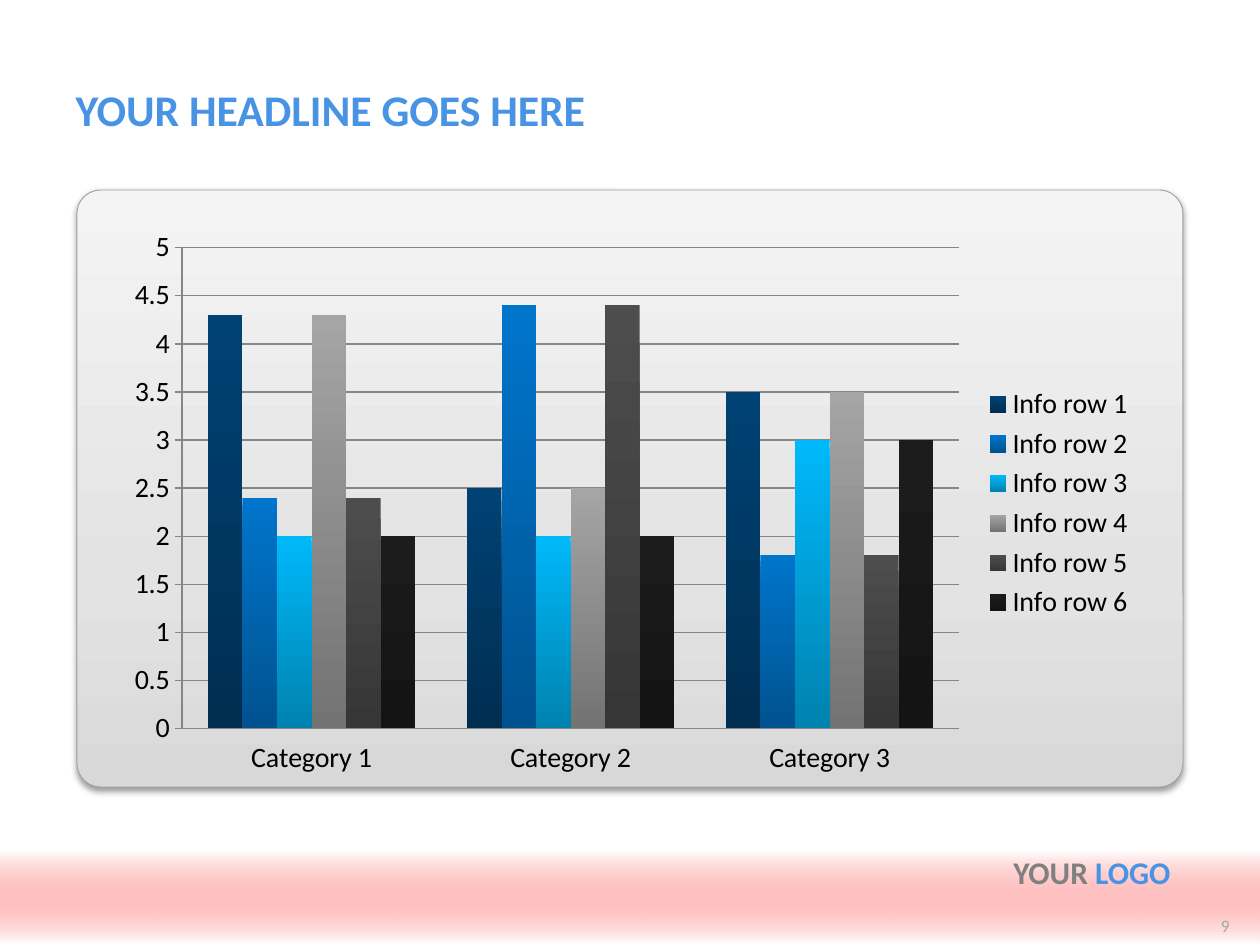
from copy import deepcopy
from dataclasses import dataclass

from lxml.etree import SubElement
from pptx import Presentation
from pptx.chart.data import CategoryChartData
from pptx.dml.color import RGBColor
from pptx.enum.chart import XL_CHART_TYPE, XL_LEGEND_POSITION, XL_TICK_MARK
from pptx.enum.shapes import MSO_SHAPE
from pptx.enum.text import MSO_ANCHOR, PP_ALIGN
from pptx.oxml import parse_xml
from pptx.oxml.ns import nsdecls, qn
from pptx.util import Emu, Pt


@dataclass(frozen=True)
class Theme:
    font: str = "Calibri"
    blue: str = "4993E5"
    gray: str = "808080"
    pale: str = "A6A6A6"
    black: str = "000000"
    edge: str = "A1A1A1"
    grid: str = "868686"
    panel: tuple = ((0, "D8D8D8"), (35, "E3E3E3"), (100, "F4F4F4"))
    band: tuple = ((0, "FF0000", 0), (100, "FFFFFF"))
    bars: tuple = ("004274", "0075CC", "00B9FA", "A5A5A5", "4D4D4D", "1C1C1C")
    head: int = 25
    logo: int = 18
    label: int = 16
    page: int = 10


T = Theme()
SCALE = 914400 / 126
UP, DOWN = 90, 270

CATS = ("Category 1", "Category 2", "Category 3")
ROWS = ((4.3, 2.5, 3.5), (2.4, 4.4, 1.8), (2, 2, 3)) * 2


def px(n):
    return Emu(round(n * SCALE))


def place(box):
    return [px(n) for n in box]


def rgb(code):
    return RGBColor.from_string(code)


def shade(code, part=0.7):
    return "".join(f"{round(c * part):02X}" for c in rgb(code))


def style(font, size, color, bold=None):
    font.name, font.size, font.bold = T.font, Pt(size), bold
    font.color.rgb = rgb(color)


def blend(fill, root, stops, angle):
    """Fill with (percent, colour[, alpha]) stops running along the angle."""
    fill.gradient()
    fill.gradient_angle = angle
    group = root.find(".//" + qn("a:gsLst"))
    for _ in stops[2:]:
        group.append(deepcopy(group[0]))
    for stop, (at, color, *alpha) in zip(fill.gradient_stops, stops):
        stop.position = at / 100
        stop.color.rgb = rgb(color)
        for part in alpha:
            node = group[stops.index((at, color, *alpha))][0]
            SubElement(node, qn("a:alpha"), val=str(part * 1000))


def block(slide, kind, box, stops, angle):
    shape = slide.shapes.add_shape(kind, *place(box))
    shape.shadow.inherit = False
    shape.line.fill.background()
    blend(shape.fill, shape._element, stops, angle)
    return shape


def panel(slide, box):
    shape = block(slide, MSO_SHAPE.ROUNDED_RECTANGLE, box, T.panel, UP)
    shape.adjustments[0] = 0.04
    shape.line.color.rgb = rgb(T.edge)
    shape.line.width = Pt(0.5)
    shape._element.spPr.find(qn("a:effectLst")).append(parse_xml(
        f'<a:outerShdw {nsdecls("a")} blurRad="{Pt(3.5)}" dist="{Pt(2)}" '
        'dir="5400000" rotWithShape="0"><a:srgbClr val="000000">'
        '<a:alpha val="38000"/></a:srgbClr></a:outerShdw>'))


def title(slide, box):
    head = slide.shapes.title
    head.left, head.top, head.width, head.height = place(box)
    frame = head.text_frame
    frame.text = "YOUR HEADLINE GOES HERE"
    frame.vertical_anchor = MSO_ANCHOR.MIDDLE
    line = frame.paragraphs[0]
    line.alignment = PP_ALIGN.LEFT
    style(line.font, T.head, T.blue, True)


def note(slide, box, anchor):
    """Add a right-aligned text box and return its paragraph."""
    frame = slide.shapes.add_textbox(*place(box)).text_frame
    frame.word_wrap = True
    frame.vertical_anchor = anchor
    line = frame.paragraphs[0]
    line.alignment = PP_ALIGN.RIGHT
    return line


def footer(slide, box):
    x, y, w, h = box
    block(slide, MSO_SHAPE.RECTANGLE, box, T.band, DOWN)
    logo = note(slide, (x + 63, y - 4, 1120, 69), MSO_ANCHOR.TOP)
    for text, color in (("YOUR", T.gray), (" LOGO", T.blue)):
        run = logo.add_run()
        run.text = text
        style(run.font, T.logo, color, True)
    page = note(slide, (x + w - 77, y + h - 38, 59, 38), MSO_ANCHOR.MIDDLE)
    page.text = "9"
    style(page.font, T.page, T.pale)


def fix_plot(chart, box, plot):
    """Pin the inner plot area, given in px relative to the chart box."""
    size = box[2:] * 2
    parts = "".join(
        f'<c:{tag} val="{n / full:.3f}"/>'
        for tag, n, full in zip("xywh", plot, size))
    area = chart._chartSpace.find(".//" + qn("c:plotArea"))
    for old in area.findall(qn("c:layout")):
        area.remove(old)
    area.insert(0, parse_xml(
        f'<c:layout {nsdecls("c")}><c:manualLayout>'
        '<c:layoutTarget val="inner"/><c:xMode val="edge"/>'
        f'<c:yMode val="edge"/>{parts}</c:manualLayout></c:layout>'))


def bars(slide, box):
    data = CategoryChartData()
    data.categories = CATS
    for i, vals in enumerate(ROWS, 1):
        data.add_series(f"Info row {i}", vals)
    chart = slide.shapes.add_chart(
        XL_CHART_TYPE.COLUMN_CLUSTERED, *place(box), data).chart
    style(chart.font, T.label, T.black)
    chart.has_title = False
    chart.has_legend = True
    chart.legend.position = XL_LEGEND_POSITION.RIGHT
    chart.legend.include_in_layout = False
    style(chart.legend.font, T.label, T.black)

    plot = chart.plots[0]
    plot.gap_width, plot.overlap = 150, 0
    plot.vary_by_categories = False
    for row, color in zip(plot.series, T.bars):
        blend(row.format.fill, row._element,
              ((0, color), (100, shade(color))), DOWN)

    for axis in (chart.category_axis, chart.value_axis):
        axis.major_tick_mark = XL_TICK_MARK.CROSS
        style(axis.tick_labels.font, T.label, T.black)
    chart.category_axis.format.line.fill.background()
    axis = chart.value_axis
    axis.minimum_scale, axis.maximum_scale, axis.major_unit = 0, 5, 0.5
    axis.has_major_gridlines = True
    for part in (axis, axis.major_gridlines):
        part.format.line.color.rgb = rgb(T.grid)
        part.format.line.width = Pt(0.75)
    fix_plot(chart, box, (67, 28, 777, 481))


def main():
    deck = Presentation()
    deck.slide_width, deck.slide_height = px(1260), px(945)
    slide = deck.slides.add_slide(deck.slide_layouts[5])
    panel(slide, (77, 190, 1106, 597))
    title(slide, (63, 74, 1134, 69))
    bars(slide, (115, 220, 1032, 567))
    footer(slide, (0, 851, 1260, 94))
    deck.save("out.pptx")


if __name__ == "__main__":
    main()
